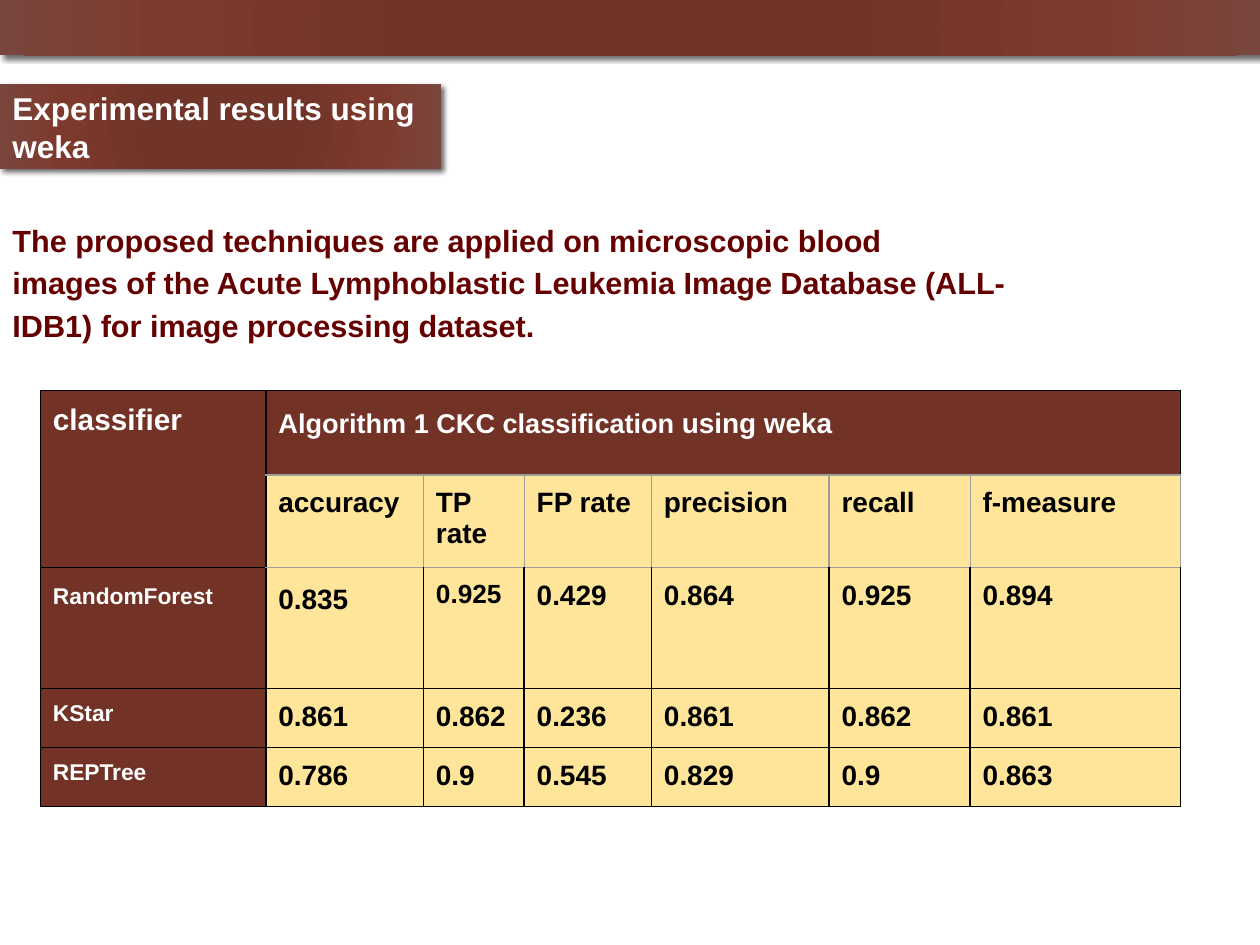
from pptx import Presentation
from pptx import util as u
from pptx.dml.color import RGBColor
from pptx.enum import shapes, text
from pptx.oxml import parse_xml
from pptx.oxml.ns import nsdecls, qn

BROWN = RGBColor(0x72, 0x32, 0x26)
CREAM = RGBColor(0xFF, 0xE5, 0x99)
MAROON = RGBColor(0x66, 0x00, 0x00)
GREY = RGBColor(0x9E, 0x9E, 0x9E)
BLACK = RGBColor(0, 0, 0)
WHITE = RGBColor(0xFF, 0xFF, 0xFF)

# Content
TITLE = "Experimental results using weka"
INTRO = [
    "The proposed techniques are applied on microscopic blood",
    "images of the Acute Lymphoblastic Leukemia Image Database "
    "(ALL-IDB1) for image processing dataset.",
]
ROWS = [
    ["classifier", "Algorithm 1 CKC classification ", "", "", "", "", ""],
    ["", "accuracy", "TP rate", "FP rate", "precision", "recall", "f-measure"],
    ["RandomForest", "0.835", "0.925", "0.429", "0.864", "0.925", "0.894"],
    ["KStar", "0.861", "0.862", "0.236", "0.861", "0.862", "0.861"],
    ["REPTree", "0.786", "0.9", "0.545", "0.829", "0.9", "0.863"],
]
HEADING_END = "using weka"
COL_WIDTHS = [1.79, 1.25, 0.8, 1.01, 1.41, 1.12, 1.67]
ROW_HEIGHTS = [0.67, 0.73, 0.96, 0.47, 0.47]
SIZES = {(0, 0): 17, (0, 1): 15.5, (2, 2): 15}  # exceptions to 13 and 16
LOOSE = {(0, 1), (2, 0), (2, 1)}  # cells with wider line spacing
BANDS = [(0, 0, 10, 0.44, ""), (0, 0.67, 3.5, 0.67, TITLE)]
STOPS = [(0, "723226"), (34, "703428"), (70, "7E392E"), (100, "79463D")]


def add_text(p, words, size, color):
    r = p.add_run()
    r.text = words
    for name, value in dict(name="Arial", size=u.Pt(size), bold=True).items():
        setattr(r.font, name, value)
    r.font.color.rgb = color


def add_band(s, left, top, width, height, words):
    sp = s.shapes.add_shape(shapes.MSO_SHAPE.RECTANGLE,
                            *map(u.Inches, (left, top, width, height)))
    sp.line.fill.background()
    # Radial gradient
    sp.fill.gradient()
    stops = "".join(f'<a:gs pos="{pos * 1000}"><a:srgbClr val="{c}"/></a:gs>'
                    for pos, c in STOPS)
    grad = parse_xml(
        f'<a:gradFill {nsdecls("a")}><a:gsLst>{stops}</a:gsLst>'
        '<a:path path="circle"><a:fillToRect l="50000" t="50000" r="50000" '
        'b="50000"/></a:path></a:gradFill>')
    sp_pr = sp._element.spPr
    sp_pr.replace(sp_pr.find(qn("a:gradFill")), grad)
    # Soft shadow
    sp.shadow.inherit = False
    sp_pr.find(qn("a:effectLst")).append(parse_xml(
        f'<a:outerShdw {nsdecls("a")} blurRad="{u.Pt(3)}" dist="{u.Pt(2)}" '
        'dir="2700000" algn="tl" rotWithShape="0"><a:srgbClr val="000000">'
        '<a:alpha val="60000"/></a:srgbClr></a:outerShdw>'))
    if words:
        tf = sp.text_frame
        tf.word_wrap = True
        tf.vertical_anchor = text.MSO_ANCHOR.MIDDLE
        p = tf.paragraphs[0]
        p.alignment = text.PP_ALIGN.LEFT
        add_text(p, words, 18, WHITE)


def set_borders(cell, colors):
    tc_pr = cell._tc.get_or_add_tcPr()
    for side, color in colors.items():
        width = u.Pt(0.75 if color == GREY else 1)
        tc_pr.append(parse_xml(
            f'<a:ln{side} {nsdecls("a")} w="{width}"><a:solidFill>'
            f'<a:srgbClr val="{color}"/></a:solidFill></a:ln{side}>'))


def set_margins(box):
    for side in ("left", "top", "right", "bottom"):
        setattr(box, f"margin_{side}", u.Inches(0.1))


def fill_cell(cell, row, col):
    words = ROWS[row][col]
    dark = row == 0 or col == 0
    set_margins(cell)
    grey_sides = ""
    if col and row < 3:
        grey_sides = ("B", "LRTB", "T")[row]
    set_borders(cell, {side: GREY if side in grey_sides else BLACK
                       for side in "LRTB"})
    cell.fill.solid()
    cell.fill.fore_color.rgb = BROWN if dark else CREAM
    if not words:
        return
    p = cell.text_frame.paragraphs[0]
    if (row, col) in LOOSE:
        p.line_spacing = 1.15
    color = WHITE if dark else BLACK
    add_text(p, words, SIZES.get((row, col), 16 if col else 13), color)
    if (row, col) == (0, 1):
        add_text(p, HEADING_END, 16, color)


def main():
    prs = Presentation()
    prs.slide_width, prs.slide_height = u.Inches(10), u.Inches(7.5)
    s = prs.slides.add_slide(prs.slide_layouts[6])

    # Top bar and title
    for band in BANDS:
        add_band(s, *band)

    # Introduction
    tf = s.shapes.add_textbox(*map(u.Inches, (0, 1.62, 8.49, 1.49))).text_frame
    tf.word_wrap = True
    set_margins(tf)
    for i, line in enumerate(INTRO):
        p = tf.add_paragraph() if i else tf.paragraphs[0]
        p.line_spacing = 1.15
        add_text(p, line, 17.5, MAROON)

    # Results table
    table = s.shapes.add_table(
        len(ROWS), len(COL_WIDTHS), u.Inches(0.32), u.Inches(3.1),
        u.Inches(sum(COL_WIDTHS)), u.Inches(sum(ROW_HEIGHTS))).table
    for column, width in zip(table.columns, COL_WIDTHS):
        column.width = u.Inches(width)
    for table_row, height in zip(table.rows, ROW_HEIGHTS):
        table_row.height = u.Inches(height)
    table.cell(0, 0).merge(table.cell(1, 0))
    table.cell(0, 1).merge(table.cell(0, len(COL_WIDTHS) - 1))
    for row in range(len(ROWS)):
        for col in range(len(COL_WIDTHS)):
            fill_cell(table.cell(row, col), row, col)

    prs.save("out.pptx")


if __name__ == "__main__":
    main()
